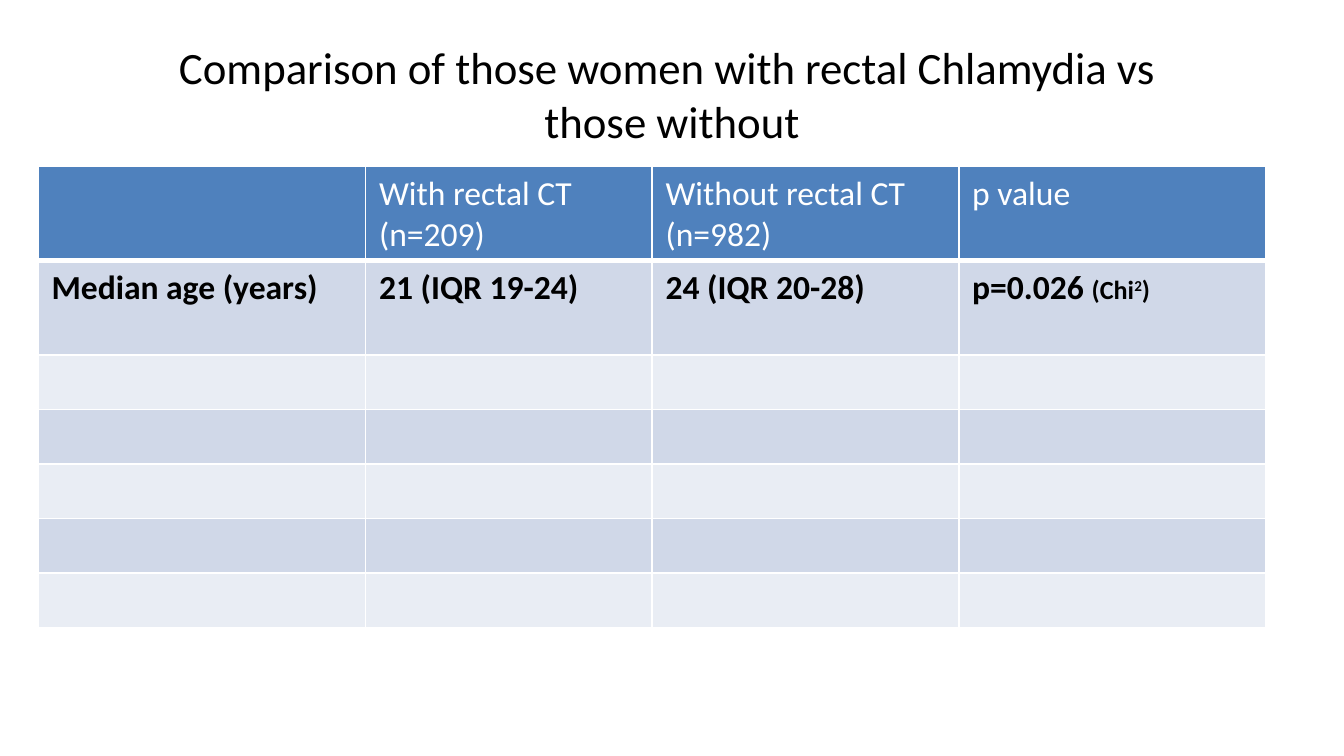
from lxml.etree import SubElement
from pptx import Presentation
from pptx.dml.color import RGBColor
from pptx.enum.text import MSO_ANCHOR, PP_ALIGN
from pptx.oxml.ns import qn
from pptx.util import Pt

HUES = {"head": "4F81BD", "dark": "D0D8E8", "light": "E9EDF4",
        "white": "FFFFFF", "black": "000000"}
COLS = [175.5, 153.5, 164.25, 164.25]
ROWS = [50.4, 50.4] + [29.25] * 5
HEADS = ["", "With rectal CT (n=209)", "Without rectal CT (n=982)", "p value"]
AGES = ["Median age (years)", "21 (IQR 19-24)", "24 (IQR 20-28)", "p=0.026 "]


def write(para, text, size=18, hue="black", bold=False, base=0):
    run = para.add_run()
    run.text = text
    font = run.font
    font.name, font.size, font.bold = "Calibri", Pt(size), bold
    font.color.rgb = RGBColor.from_string(HUES[hue])
    if base:
        font._element.set("baseline", str(base * 1000))


def edge(cell, side, width):
    """Draw a white border on one side; call before the fill is set."""
    line = SubElement(cell._tc.get_or_add_tcPr(), qn(f"a:ln{side}"), w=str(Pt(width)))
    fill = SubElement(line, qn("a:solidFill"))
    SubElement(fill, qn("a:srgbClr"), val=HUES["white"])


def add_title(slide, left, top, width, height):
    frame = slide.shapes.add_textbox(Pt(left), Pt(top), Pt(width), Pt(height)).text_frame
    frame.word_wrap = True
    frame.vertical_anchor = MSO_ANCHOR.MIDDLE
    para = frame.paragraphs[0]
    para.alignment = PP_ALIGN.CENTER
    write(para, "Comparison of those women with rectal Chlamydia vs ", size=24)
    para.add_line_break()
    write(para, "those without", size=24)


def add_grid(slide, left, top, width, height):
    table = slide.shapes.add_table(len(ROWS), len(COLS), Pt(left), Pt(top),
                                   Pt(width), Pt(height)).table
    table.first_row = table.horz_banding = False
    for col, size in zip(table.columns, COLS):
        col.width = Pt(size)
    for i, (row, size) in enumerate(zip(table.rows, ROWS)):
        row.height = Pt(size)
        hue = "head" if i == 0 else "dark" if i % 2 else "light"
        for cell in row.cells:
            for side in "LRTB":
                edge(cell, side, 3 if i == 0 and side == "B" else 1)
            cell.fill.solid()
            cell.fill.fore_color.rgb = RGBColor.from_string(HUES[hue])

    for j, (head, age) in enumerate(zip(HEADS, AGES)):
        if head:
            write(table.cell(0, j).text_frame.paragraphs[0], head, hue="white")
        write(table.cell(1, j).text_frame.paragraphs[0], age, bold=True)
    test = table.cell(1, 3).text_frame.paragraphs[0]
    for text, base in [("(Chi", 0), ("2", 30), (")", 0)]:
        write(test, text, size=14, bold=True, base=base)


def main():
    deck = Presentation()
    deck.slide_width, deck.slide_height = Pt(720), Pt(405)
    slide = deck.slides.add_slide(deck.slide_layouts[6])
    add_title(slide, 36, 16.25, 648, 67.5)
    add_grid(slide, 20.4, 89.3, sum(COLS), sum(ROWS))
    deck.save("out.pptx")


if __name__ == "__main__":
    main()
